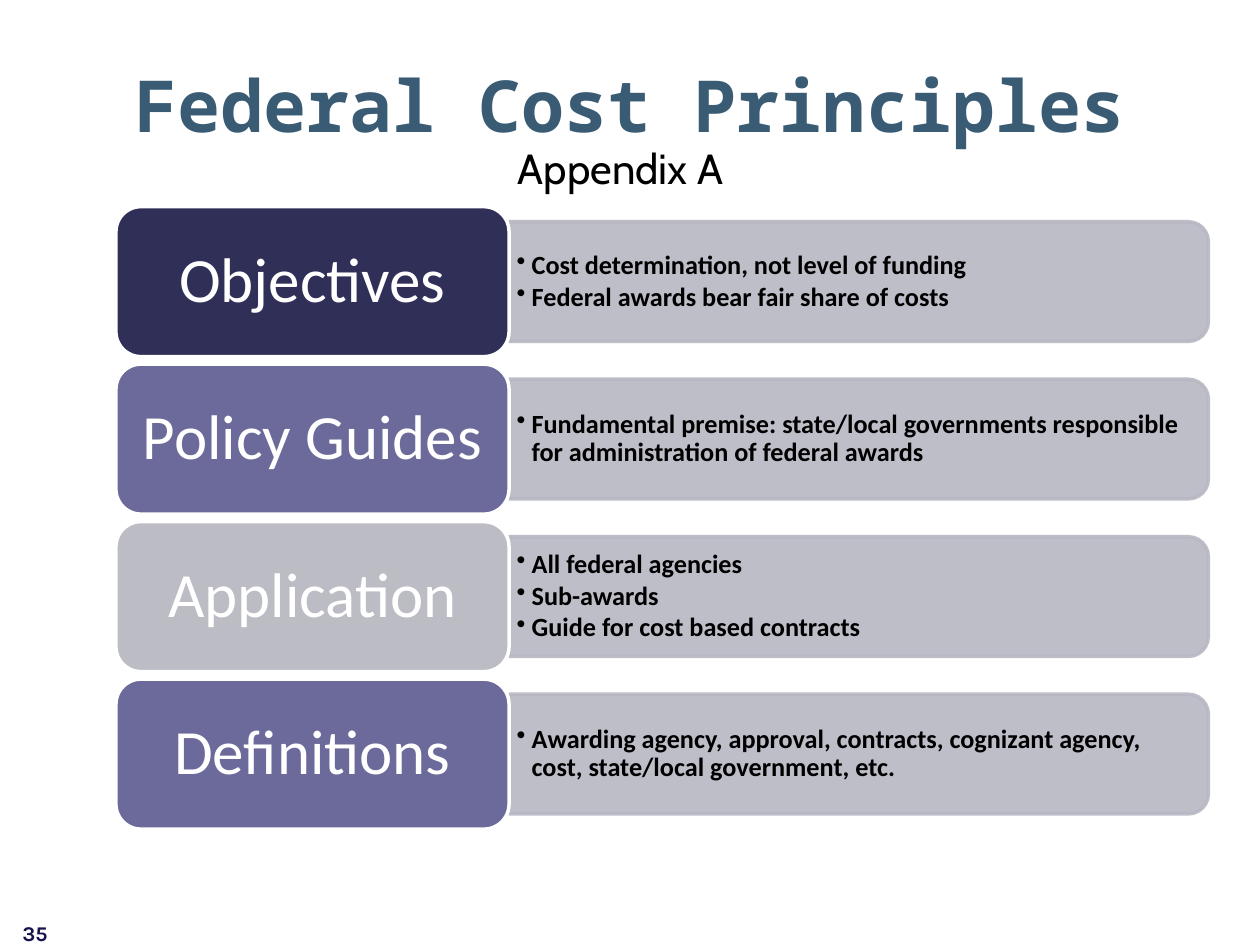
from lxml import etree
from pptx import Presentation
from pptx import util as u
from pptx.dml.color import RGBColor
from pptx.enum import shapes, text
from pptx.oxml import ns

COLORS = {
    "title": "395B74", "number": "17144D", "black": "000000", "white": "FFFFFF",
    "bar": "B8B8C4", "navy": "302F58", "violet": "6B6A9A", "gray": "BCBCC5",
}
FORMATS = {
    "title": {"name": "Noto Sans Mono", "size": u.Pt(41), "bold": True},
    "subtitle": {"name": "Cabin", "size": u.Pt(24), "bold": False},
    "topic": {"name": "Calibri", "size": u.Pt(36), "bold": False},
    "detail": {"name": "Calibri", "size": u.Pt(15), "bold": True},
    "number": {"name": "Karla", "size": u.Pt(12), "bold": True},
}
TOPICS = [
    ("Objectives", "navy", ["Cost determination, not level of funding",
                            "Federal awards bear fair share of costs"]),
    ("Policy Guides", "violet", ["Fundamental premise: state/local governments responsible "
                                 "for administration of federal awards"]),
    ("Application", "gray", ["All federal agencies", "Sub-awards",
                             "Guide for cost based contracts"]),
    ("Definitions", "violet", ["Awarding agency, approval, contracts, cognizant agency, "
                               "cost, state/local government, etc."]),
]


def rgb(color):
    """Return the named palette colour."""
    return RGBColor.from_string(COLORS[color])


def add_element(parent, tag, **attributes):
    """Append a DrawingML element with the given attributes."""
    return etree.SubElement(parent, ns.qn(tag), attributes)


def style(paragraph, role, color):
    """Apply the font format of a role to a paragraph."""
    for attribute, value in FORMATS[role].items():
        setattr(paragraph.font, attribute, value)
    paragraph.font.color.rgb = rgb(color)


def set_frame(frame, side, top, anchor):
    """Set wrapping, insets in inches and the vertical anchor."""
    settings = {
        "word_wrap": True, "vertical_anchor": anchor,
        "margin_left": u.Inches(side), "margin_right": u.Inches(side),
        "margin_top": u.Inches(top), "margin_bottom": u.Inches(top),
    }
    for attribute, value in settings.items():
        setattr(frame, attribute, value)


def add_line_of_text(slide, box, wording, role, color, align, top=0.05):
    """Place one line of text in the box."""
    frame = slide.shapes.add_textbox(*map(u.Inches, box)).text_frame
    set_frame(frame, 0.1, top, text.MSO_ANCHOR.TOP)
    line = frame.paragraphs[0]
    line.text, line.alignment = wording, align
    style(line, role, color)


def add_panel(slide, preset, box, fill, outline):
    """Place a filled, outlined preset shape in the box."""
    panel = slide.shapes.add_shape(preset, *map(u.Inches, box))
    panel.shadow.inherit = False
    panel.fill.solid()
    panel.fill.fore_color.rgb = rgb(fill)
    panel.line.color.rgb = rgb(outline)
    panel.line.width = u.Pt(2)
    return panel


def add_detail_bar(slide, box):
    """Place a translucent bar whose right corners are rounded."""
    left, top, width, height = box
    shift = (width - height) / 2
    bar = add_panel(slide, shapes.MSO_SHAPE.ROUND_2_SAME_RECTANGLE,
                    (left + shift, top - shift, height, width), "bar", "bar")
    bar.rotation = 90
    for color in bar.fill._xPr.iter(ns.qn("a:srgbClr")):
        add_element(color, "a:alpha", val="90000")


def add_details(slide, box, details):
    """Place the bulleted details in the box."""
    frame = slide.shapes.add_textbox(*map(u.Inches, box)).text_frame
    set_frame(frame, 0.06, 0.03, text.MSO_ANCHOR.MIDDLE)
    for index, detail in enumerate(details):
        item = frame.add_paragraph() if index else frame.paragraphs[0]
        item.text = detail
        item.line_spacing, item.space_after = 0.9, u.Pt(2)
        properties = item._p.get_or_add_pPr()
        properties.set("marL", str(u.Inches(0.12)))
        properties.set("indent", str(u.Inches(-0.12)))
        add_element(properties, "a:buChar", char="•")
        style(item, "detail", "black")


def add_topic(slide, box, topic, fill, details):
    """Place a topic label with its detail bar in the box."""
    left, top, width, height = box
    label_width, inset, pad = 3.12, 0.12, 0.05
    bar_left = left + label_width
    bar_width, bar_height = width - label_width, height - 2 * inset
    add_detail_bar(slide, (bar_left, top + inset, bar_width, bar_height))
    add_details(slide, (bar_left, top + inset + pad, bar_width - pad,
                        bar_height - 2 * pad), details)
    label = add_panel(slide, shapes.MSO_SHAPE.ROUNDED_RECTANGLE,
                      (left, top, label_width, height), fill, "white")
    set_frame(label.text_frame, 0.15, 0.07, text.MSO_ANCHOR.MIDDLE)
    heading = label.text_frame.paragraphs[0]
    heading.text, heading.alignment = topic, text.PP_ALIGN.CENTER
    heading.line_spacing = 0.9
    style(heading, "topic", "white")


def add_topics(slide, box):
    """Stack the topics evenly in the box."""
    left, top, width, height = box
    gap = 0.06
    row = (height - gap * (len(TOPICS) - 1)) / len(TOPICS)
    for index, topic in enumerate(TOPICS):
        add_topic(slide, (left, top + index * (row + gap), width, row), *topic)


def main():
    """Build and save the slide."""
    deck = Presentation()
    deck.slide_width, deck.slide_height = u.Inches(10), u.Inches(7.5)
    slide = deck.slides.add_slide(deck.slide_layouts[6])
    center, left = text.PP_ALIGN.CENTER, text.PP_ALIGN.LEFT
    add_topics(slide, (0.92, 1.64, 8.67, 4.94))
    add_line_of_text(slide, (0.26, 1.08, 9.33, 0.5), "Appendix A",
                     "subtitle", "black", center)
    add_line_of_text(slide, (0.5, 0.48, 9, 1.07), "Federal Cost Principles",
                     "title", "title", center, top=0)
    add_line_of_text(slide, (0.08, 7.26, 2.33, 0.4), "35", "number", "number", left)
    deck.save("out.pptx")


if __name__ == "__main__":
    main()
